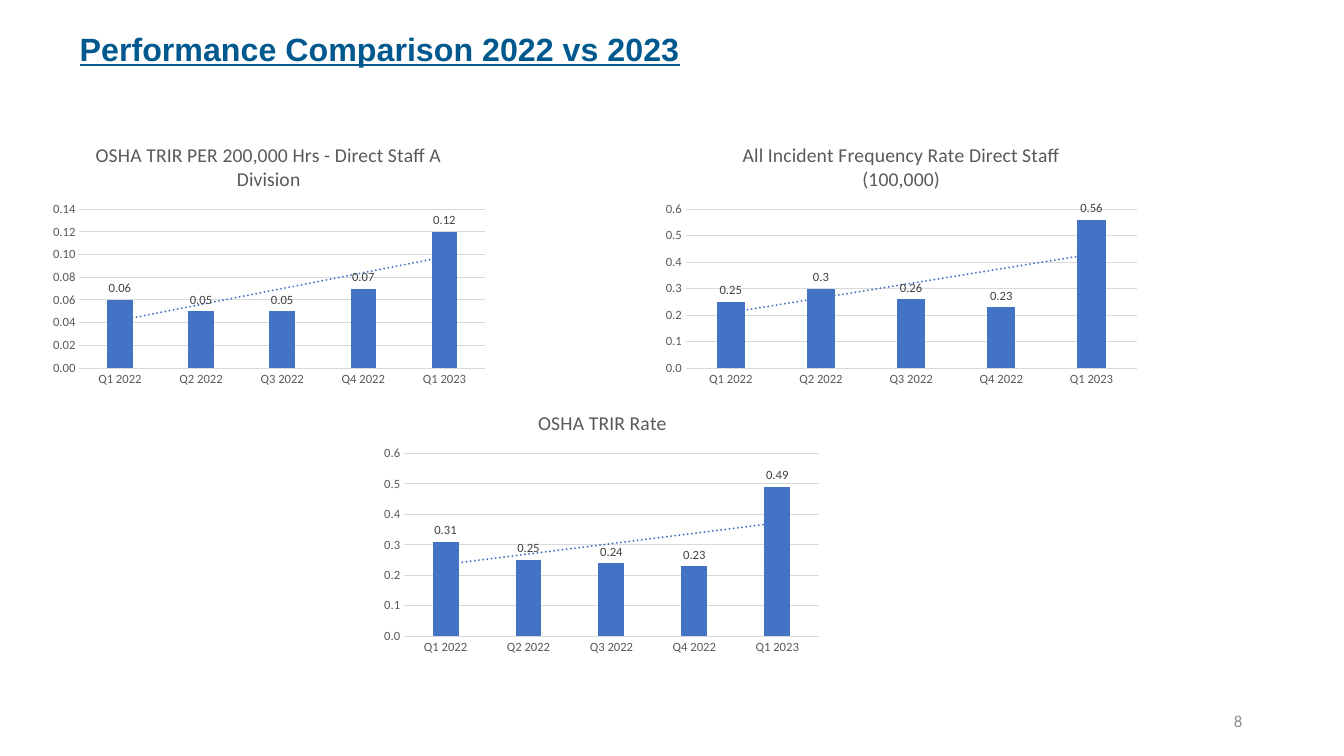
"""Build the slide comparing 2022 and 2023 safety performance in three column charts."""
from dataclasses import dataclass

from lxml.etree import SubElement
from pptx import Presentation
from pptx.chart.data import CategoryChartData
from pptx.dml.color import RGBColor
from pptx.enum.chart import XL_CHART_TYPE, XL_LABEL_POSITION, XL_TICK_MARK
from pptx.enum.text import MSO_ANCHOR, MSO_AUTO_SIZE, PP_ALIGN
from pptx.oxml import parse_xml
from pptx.oxml.ns import nsdecls, qn
from pptx.util import Inches, Pt


@dataclass(frozen=True)
class Theme:
    heading: str = "00598E"
    page: str = "8C8C8C"
    column: str = "4472C4"
    grid: str = "D9D9D9"
    axis: str = "595959"
    label: str = "404040"
    chart_text: str = "000000"
    heading_font: str = "Arial"
    body_font: str = "Calibri"
    heading_size: int = 23
    chart_title_size: int = 14
    page_size: int = 12
    chart_size: int = 10
    axis_size: int = 9


def format_font(font, size, color, name=Theme.body_font, bold=False, underline=False):
    font.size = Pt(size)
    font.name = name
    font.bold = bold
    font.underline = underline
    font.color.rgb = RGBColor.from_string(color)


def write_text(frame, text, align=PP_ALIGN.LEFT, **font_format):
    paragraph = frame.paragraphs[0]
    paragraph.alignment = align
    run = paragraph.add_run()
    run.text = text
    format_font(run.font, **font_format)
    return paragraph


theme = Theme()
presentation = Presentation()
presentation.slide_width = Inches(13.33)
presentation.slide_height = Inches(7.5)
slide = presentation.slides.add_slide(presentation.slide_layouts[5])

title = slide.shapes.title
title.left, title.top = Inches(0.69), Inches(0)
title.width, title.height = Inches(9.84), Inches(1.02)
title.text_frame.auto_size = MSO_AUTO_SIZE.NONE
title.text_frame.vertical_anchor = MSO_ANCHOR.MIDDLE
heading = write_text(title.text_frame, "Performance Comparison 2022 vs 2023", size=theme.heading_size,
                     color=theme.heading, name=theme.heading_font, bold=True, underline=True)
heading.line_spacing = 0.9

page_number = slide.shapes.add_textbox(Inches(9.42), Inches(6.95), Inches(3), Inches(0.4))
page_number.text_frame.word_wrap = True
page_number.text_frame.vertical_anchor = MSO_ANCHOR.MIDDLE
write_text(page_number.text_frame, "8", align=PP_ALIGN.RIGHT, size=theme.page_size, color=theme.page)

quarters = ["Q1 2022", "Q2 2022", "Q3 2022", "Q4 2022", "Q1 2023"]
charts = [
    ("OSHA TRIR PER 200,000 Hrs - Direct Staff A Division", (0.43, 1.26, 4.47),
     (0.06, 0.05, 0.05, 0.07, 0.12), 0.14, 0.02, "0.00", "0.00", (0.08, 0.31, 0.9, 0.6)),
    ("All Incident Frequency Rate Direct Staff (100,000)", (6.51, 1.26, 4.86),
     (0.25, 0.3, 0.26, 0.23, 0.56), 0.6, 0.1, "0.0", "General", (0.06, 0.31, 0.92, 0.6)),
    ("OSHA TRIR Rate", (3.74, 3.92, 4.47),
     (0.31, 0.25, 0.24, 0.23, 0.49), 0.6, 0.1, "0.0", "General", (0.06, 0.22, 0.92, 0.69)),
]

for name, (left, top, width), values, maximum, step, axis_format, label_format, plot_area in charts:
    data = CategoryChartData()
    data.categories = quarters
    data.add_series("Series 1", values)
    chart = slide.shapes.add_chart(XL_CHART_TYPE.COLUMN_CLUSTERED, Inches(left), Inches(top),
                                   Inches(width), Inches(2.63), data).chart
    format_font(chart.font, theme.chart_size, theme.chart_text)
    chart.has_legend = False
    chart.has_title = True
    write_text(chart.chart_title.text_frame, name, align=PP_ALIGN.CENTER,
               size=theme.chart_title_size, color=theme.axis)
    chart.chart_title.include_in_layout = False

    for axis in (chart.category_axis, chart.value_axis):
        axis.major_tick_mark = XL_TICK_MARK.NONE
        axis.minor_tick_mark = XL_TICK_MARK.NONE
        format_font(axis.tick_labels.font, theme.axis_size, theme.axis)
    value_axis = chart.value_axis
    value_axis.minimum_scale = 0
    value_axis.maximum_scale = maximum
    value_axis.major_unit = step
    value_axis.tick_labels.number_format = axis_format
    value_axis.tick_labels.number_format_is_linked = False
    value_axis.format.line.fill.background()
    for line in (chart.category_axis.format.line, value_axis.major_gridlines.format.line):
        line.color.rgb = RGBColor.from_string(theme.grid)
        line.width = Pt(0.75)

    plot = chart.plots[0]
    plot.vary_by_categories = False
    plot.gap_width = 219
    plot.overlap = -27
    series = plot.series[0]
    series.format.fill.solid()
    series.format.fill.fore_color.rgb = RGBColor.from_string(theme.column)
    labels = series.data_labels
    labels.show_value = True
    labels.position = XL_LABEL_POSITION.OUTSIDE_END
    labels.number_format = label_format
    labels.number_format_is_linked = False
    format_font(labels.font, theme.axis_size, theme.label)

    trend_line = parse_xml(
        f'<c:trendline {nsdecls("c", "a")}><c:spPr><a:ln w="{Pt(1.5)}" cap="rnd"><a:solidFill>'
        f'<a:srgbClr val="{theme.column}"/></a:solidFill><a:prstDash val="sysDot"/></a:ln></c:spPr>'
        '<c:trendlineType val="linear"/><c:dispRSqr val="0"/><c:dispEq val="0"/></c:trendline>')
    series._element.find(qn("c:cat")).addprevious(trend_line)

    plot_element = chart._chartSpace.chart.plotArea
    for old_layout in plot_element.findall(qn("c:layout")):
        plot_element.remove(old_layout)
    layout = parse_xml(f'<c:layout {nsdecls("c")}><c:manualLayout/></c:layout>')
    plot_element.insert(0, layout)
    settings = [("layoutTarget", "inner"), ("xMode", "edge"), ("yMode", "edge"),
                *zip("xywh", plot_area)]
    for tag, setting in settings:
        SubElement(layout[0], qn(f"c:{tag}")).set("val", str(setting))

presentation.save("out.pptx")
